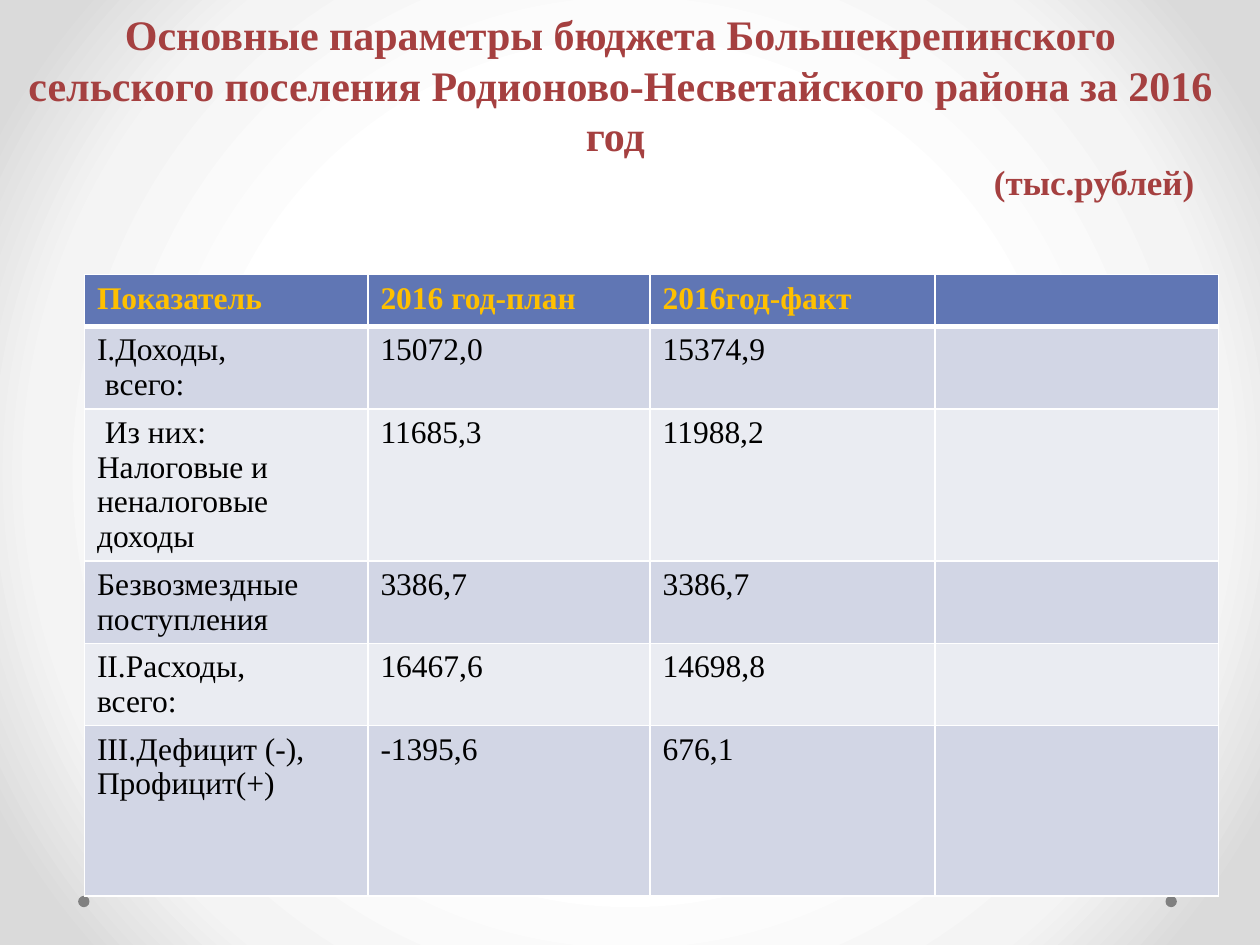
from dataclasses import dataclass

from pptx import Presentation
from pptx.dml.color import RGBColor
from pptx.enum.shapes import MSO_SHAPE
from pptx.enum.text import MSO_ANCHOR, PP_ALIGN
from pptx.oxml import parse_xml
from pptx.oxml.ns import nsdecls, qn
from pptx.util import Inches, Pt


@dataclass(frozen=True)
class Theme:
    """Colours, type sizes and font of the slide."""
    font: str = "Times New Roman"
    title: str = "A54040"
    head: str = "6076B4"
    gold: str = "FFC000"
    ink: str = "000000"
    line: str = "FFFFFF"
    dot: str = "808080"
    bands: tuple = ("D2D6E5", "EAECF2")
    glow: tuple = ((50, "FFFFFF"), (76, "F4F4F4"), (92, "DADADA"))
    large: int = 24
    mid: int = 20
    small: int = 18


THEME = Theme()
WIDE, HIGH = Inches(10), Inches(7.5)
TITLE = (
    "Основные параметры бюджета Большекрепинского сельского поселения "
    "Родионово-Несветайского района за 2016 год ",
    "(тыс.рублей)",
)
ROWS = (
    ("Показатель", "2016 год-план", "2016год-факт", ""),
    ("I.Доходы,\n всего:", "15072,0", "15374,9", ""),
    (" Из них:\nНалоговые и неналоговые доходы", "11685,3", "11988,2", ""),
    ("Безвозмездные поступления", "3386,7", "3386,7", ""),
    ("II.Расходы,\nвсего:", "16467,6", "14698,8", ""),
    ("III.Дефицит (-),\nПрофицит(+)", "-1395,6", "676,1", ""),
)


def share(left, top, width, height):
    """Turn percent shares of the slide into a box."""
    return tuple(int(part * side / 100) for part, side in
                 zip((left, top, width, height), (WIDE, HIGH) * 2))


def apply(item, form):
    """Set each format value on the item."""
    for name, value in form.items():
        setattr(item, name, value)


def style(para, size, tint, bold):
    """Format the type of one paragraph."""
    apply(para.font, {"name": THEME.font, "size": Pt(size), "bold": bold})
    para.font.color.rgb = RGBColor.from_string(tint)


def paint(fill, tint):
    """Give a fill one solid colour."""
    fill.solid()
    fill.fore_color.rgb = RGBColor.from_string(tint)


def add_glow(slide):
    """Fill the background with a round gradient."""
    slide.background.fill.gradient()
    grad = slide.element.find(".//" + qn("a:gradFill"))
    stops = "".join(f'<a:gs pos="{pos * 1000}"><a:srgbClr val="{tint}"/></a:gs>'
                    for pos, tint in THEME.glow)
    grad.getparent().replace(grad, parse_xml(
        f'<a:gradFill {nsdecls("a")} rotWithShape="1"><a:gsLst>{stops}</a:gsLst>'
        '<a:path path="circle"><a:fillToRect l="50000" t="50000" r="50000" '
        'b="50000"/></a:path></a:gradFill>'))


def add_dots(slide, box):
    """Put a dot at each end of the box."""
    left, top, width, size = box
    for edge in (left, left + width - size):
        dot = slide.shapes.add_shape(MSO_SHAPE.OVAL, edge, top, size, size)
        dot.shadow.inherit = False
        paint(dot.fill, THEME.dot)
        dot.line.fill.background()


def add_title(slide, box):
    """Place the title and its unit line in the box."""
    title = slide.shapes.title
    apply(title, dict(zip(("left", "top", "width", "height"), box)))
    frame = title.text_frame
    frame.text = "\n".join(TITLE)
    apply(frame, {"word_wrap": True, "vertical_anchor": MSO_ANCHOR.TOP})
    looks = ((THEME.large, PP_ALIGN.CENTER), (THEME.mid, PP_ALIGN.RIGHT))
    for para, (size, align) in zip(frame.paragraphs, looks):
        para.alignment = align
        style(para, size, THEME.title, True)
    frame.paragraphs[-1]._p.get_or_add_pPr().set("marR", str(Inches(0.15)))


def add_rules(cell, base):
    """Draw the four borders of a cell."""
    props = cell._tc.get_or_add_tcPr()
    for spot, (side, width) in enumerate(zip("LRTB", (1, 1, 1, base))):
        props.insert(spot, parse_xml(
            f'<a:ln{side} {nsdecls("a")} w="{Pt(width)}"><a:solidFill>'
            f'<a:srgbClr val="{THEME.line}"/></a:solidFill></a:ln{side}>'))


def add_grid(slide, box):
    """Place the budget table in the box."""
    left, top, width, height = box
    table = slide.shapes.add_table(len(ROWS), len(ROWS[0]), *box).table
    for col, part in zip(table.columns, (2.25, 2.24, 2.26, 2.25)):
        col.width = int(width * part / 9)
    for row in table.rows:
        row.height = Inches(0.41)
    table.rows[len(ROWS) - 1].height = Inches(1.35)
    for i, row in enumerate(ROWS):
        head = i == 0
        for j, text in enumerate(row):
            cell = table.cell(i, j)
            cell.text = text
            paint(cell.fill, THEME.head if head else THEME.bands[(i - 1) % 2])
            add_rules(cell, 3 if head else 1)
            for para in cell.text_frame.paragraphs:
                style(para, THEME.small, THEME.gold if head else THEME.ink, head)


def main():
    """Build and save the slide."""
    deck = Presentation()
    apply(deck, {"slide_width": WIDE, "slide_height": HIGH})
    slide = deck.slides.add_slide(deck.slide_layouts[5])
    add_glow(slide)
    add_dots(slide, share(6.2, 94.8, 87.2, 1.2))
    add_grid(slide, share(6.7, 29.07, 90, 45.33))
    add_title(slide, share(1.2, 0.27, 96.1, 22))
    deck.save("out.pptx")


if __name__ == "__main__":
    main()
